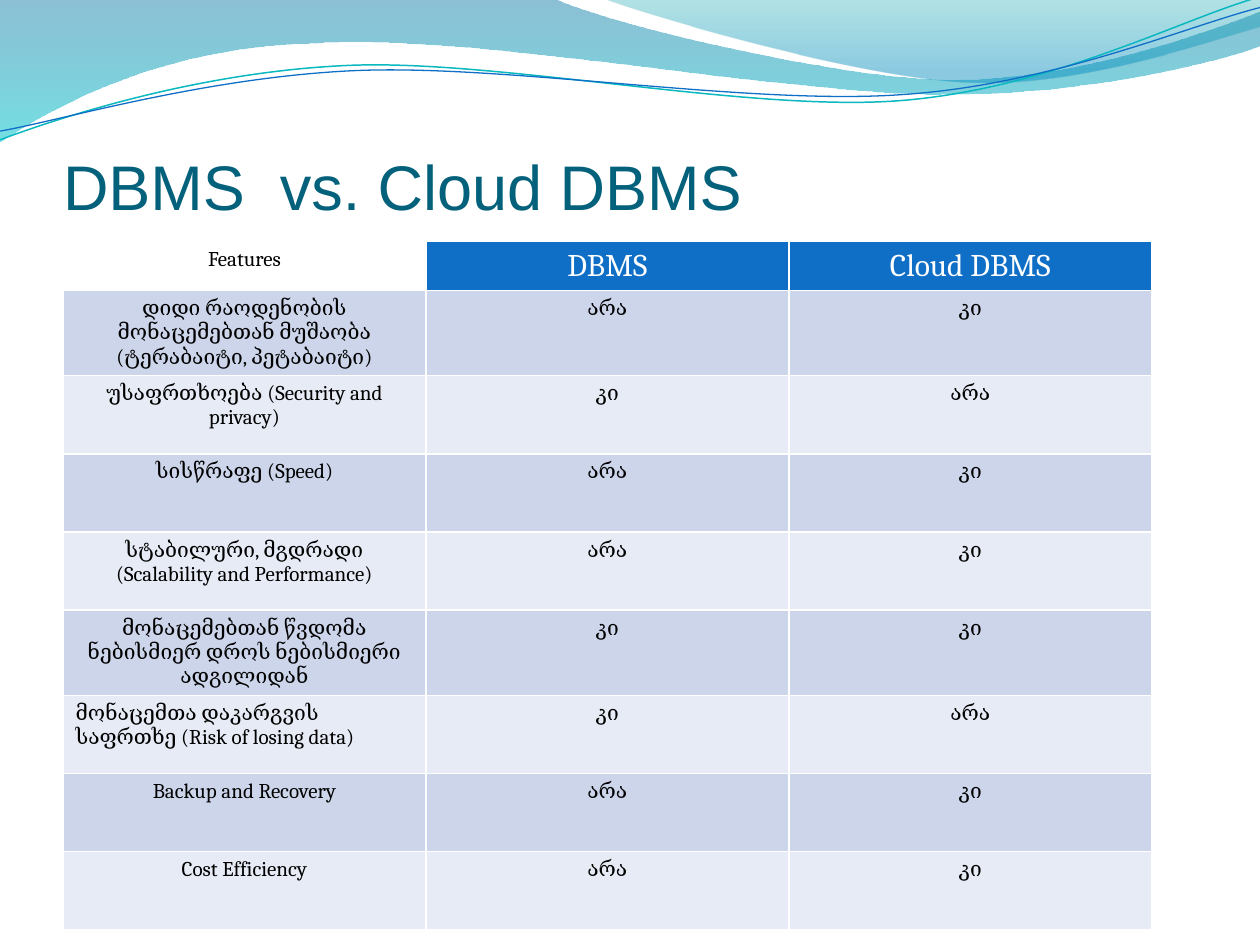
import pptx
import pptx.util
from pptx.dml.color import RGBColor
from pptx.enum.lang import MSO_LANGUAGE_ID
from pptx.enum.text import MSO_ANCHOR, PP_ALIGN
from pptx.oxml.ns import qn
from lxml import etree

Pt = pptx.util.Pt
WHITE = RGBColor(0xFF, 0xFF, 0xFF)
BLACK = RGBColor(0, 0, 0)
BLUE = RGBColor(0x0F, 0x6F, 0xC6)
TEAL = RGBColor(0x0A, 0xB8, 0xBF)
NAVY = RGBColor(0x04, 0x61, 0x7B)
BANDS = RGBColor(0xCC, 0xD5, 0xEA), RGBColor(0xE7, 0xEB, 0xF5)
LANGS = MSO_LANGUAGE_ID.GEORGIAN, MSO_LANGUAGE_ID.ENGLISH_US

TITLE = "DBMS  vs. Cloud DBMS"
YES, NO = "კი", "არა"
# A tuple in a cell holds a Georgian run and an English run.
ROWS = [
    ("Features", "DBMS", "Cloud DBMS"),
    ("დიდი რაოდენობის მონაცემებთან მუშაობა (ტერაბაიტი, პეტაბაიტი)", NO, YES),
    ("უსაფრთხოება (Security and privacy)", YES, NO),
    (("სისწრაფე (", "Speed)"), NO, YES),
    ("სტაბილური, მგდრადი (Scalability and Performance)", NO, YES),
    ("მონაცემებთან წვდომა ნებისმიერ დროს ნებისმიერი ადგილიდან", YES, YES),
    (("მონაცემთა დაკარგვის საფრთხე (", "Risk of losing data)"), YES, NO),
    ("Backup and Recovery", NO, YES),
    ("Cost Efficiency", NO, YES),
]
LEFT_ROW = 6

# Each path is a start point, then steps: (x, y) is a line, six numbers a curve.
# Gradient stops are position, colour, opacity in percent.
WAVES = [
    {"path": [(0, 0), (316.8, -0.7), (342.7, 12.2, 478.1, 45.4, 545.8, 45.4),
              (614.2, 45.4, 689.8, 18.7, 720, 6.5), (720.7, 25.9),
              (707.8, 31.7, 626.4, 54.7, 537.1, 54),
              (447.8, 54, 275, 20.2, 185, 24.5),
              (92.9, 25.9, 33.1, 59.8, -0.7, 81.4), (0, 0)],
     "stops": [(0, RGBColor(0, 0x74, 0xA1), 45), (1, RGBColor(0, 0xC6, 0xCF), 55)]},
    {"path": [(344.9, -0.7), (366.5, 7.9, 491, 44.6, 553.7, 46.8),
              (616.3, 49.7, 691.9, 23, 720, 15.1), (720, 0), (344.9, -0.7)],
     "stops": [(0, RGBColor(0, 0xA1, 0xA9), 30), (0.8, RGBColor(0, 0x8B, 0xBF), 45)]},
    {"path": [(0, 79.9), (34.6, 67, 113.8, 41, 199.4, 37.4),
              (284.4, 33.8, 427, 64.1, 513.4, 57.6),
              (599.8, 51.1, 675.4, 10.8, 718.6, -1.4)],
     "line": (TEAL, 0.85)},
    {"path": [(0, 74.9), (33.8, 69.1, 118.1, 43.9, 203.8, 40.3),
              (290.2, 36.7, 429.8, 60.5, 516.2, 54),
              (601.9, 48.2, 677.5, 15.1, 720, 4.3)],
     "line": (BLUE, 0.75)},
]


def style(item, **values):
    for name, value in values.items():
        setattr(item, name, value)


def add_path(slide, path, close):
    """Lay all points as lines, then join each curve's three into one cubic."""
    dots = [(Pt(p[i]), Pt(p[i + 1])) for p in path for i in range(0, len(p), 2)]
    pen = slide.shapes.build_freeform(*dots[0])
    pen.add_line_segments(dots[1:], close=close)
    shape = pen.convert_to_shape()
    lines = iter(list(shape._element.spPr.iter(qn("a:lnTo"))))
    for step in path[1:]:
        line = next(lines)
        if len(step) == 6:
            curve = etree.Element(qn("a:cubicBezTo"))
            line.addprevious(curve)
            for part in (line, next(lines), next(lines)):
                curve.append(part[0])
                part.getparent().remove(part)
    return shape


def draw_wave(slide, wave):
    shape = add_path(slide, wave["path"], "stops" in wave)
    shape.shadow.inherit = False
    if "line" in wave:
        shape.fill.background()
        color, width = wave["line"]
        shape.line.color.rgb = color
        shape.line.width = Pt(width)
        return
    shape.line.fill.background()
    shape.fill.gradient()
    shape.fill.gradient_angle = 270
    for stop, (pos, color, _) in zip(shape.fill.gradient_stops, wave["stops"]):
        stop.position = pos
        stop.color.rgb = color
    tags = shape._element.spPr.iter(qn("a:srgbClr"))
    for tag, (_, _, alpha) in zip(list(tags), wave["stops"]):
        etree.SubElement(tag, qn("a:alpha"), val=str(alpha * 1000))


def add_edges(cell):
    props = cell._tc.get_or_add_tcPr()
    for n, side in enumerate("LRTB"):
        edge = etree.Element(qn("a:ln" + side), w=str(Pt(1)))
        fill = etree.SubElement(edge, qn("a:solidFill"))
        etree.SubElement(fill, qn("a:srgbClr"), val=str(WHITE))
        props.insert(n, edge)


def fill_cell(cell, text, row, col):
    head = row == 0
    bright = head and col > 0
    para = cell.text_frame.paragraphs[0]
    left = row == LEFT_ROW and col == 0
    para.alignment = PP_ALIGN.LEFT if left else PP_ALIGN.CENTER
    mixed = isinstance(text, tuple)
    for n, part in enumerate(text if mixed else [text]):
        run = para.add_run()
        run.text = part
        style(run.font, name="Cambria", size=Pt(18 if bright else 12))
        run.font.color.rgb = WHITE if bright else BLACK
        if mixed:
            run.font.language_id = LANGS[n]
    cell.fill.solid()
    color = BANDS[(row - 1) % 2]
    if head:
        color = BLUE if bright else WHITE
    cell.fill.fore_color.rgb = color
    add_edges(cell)


def main():
    deck = pptx.Presentation()
    style(deck, slide_width=Pt(720), slide_height=Pt(540))
    slide = deck.slides.add_slide(deck.slide_layouts[5])
    for wave in WAVES:
        draw_wave(slide, wave)

    title = slide.shapes.title
    slide.shapes._spTree.append(title._element)  # in front of the waves
    style(title, left=Pt(36), top=Pt(66.2), width=Pt(648), height=Pt(61.2))
    style(title.text_frame, text=TITLE, vertical_anchor=MSO_ANCHOR.BOTTOM, word_wrap=True,
          margin_left=0, margin_right=0, margin_top=Pt(3.6), margin_bottom=0)
    para = title.text_frame.paragraphs[0]
    para.alignment = PP_ALIGN.LEFT
    style(para.runs[0].font, name="Arial", size=Pt(36))
    para.runs[0].font.color.rgb = NAVY

    tall = [20.9] + [44.7] * (len(ROWS) - 1)
    table = slide.shapes.add_table(len(ROWS), 3, Pt(36), Pt(138), Pt(622.2), Pt(sum(tall))).table
    style(table, first_row=False, horz_banding=False)
    for r, texts in enumerate(ROWS):
        table.rows[r].height = Pt(tall[r])
        for c, text in enumerate(texts):
            fill_cell(table.cell(r, c), text, r, c)
    deck.save("out.pptx")


if __name__ == "__main__":
    main()
